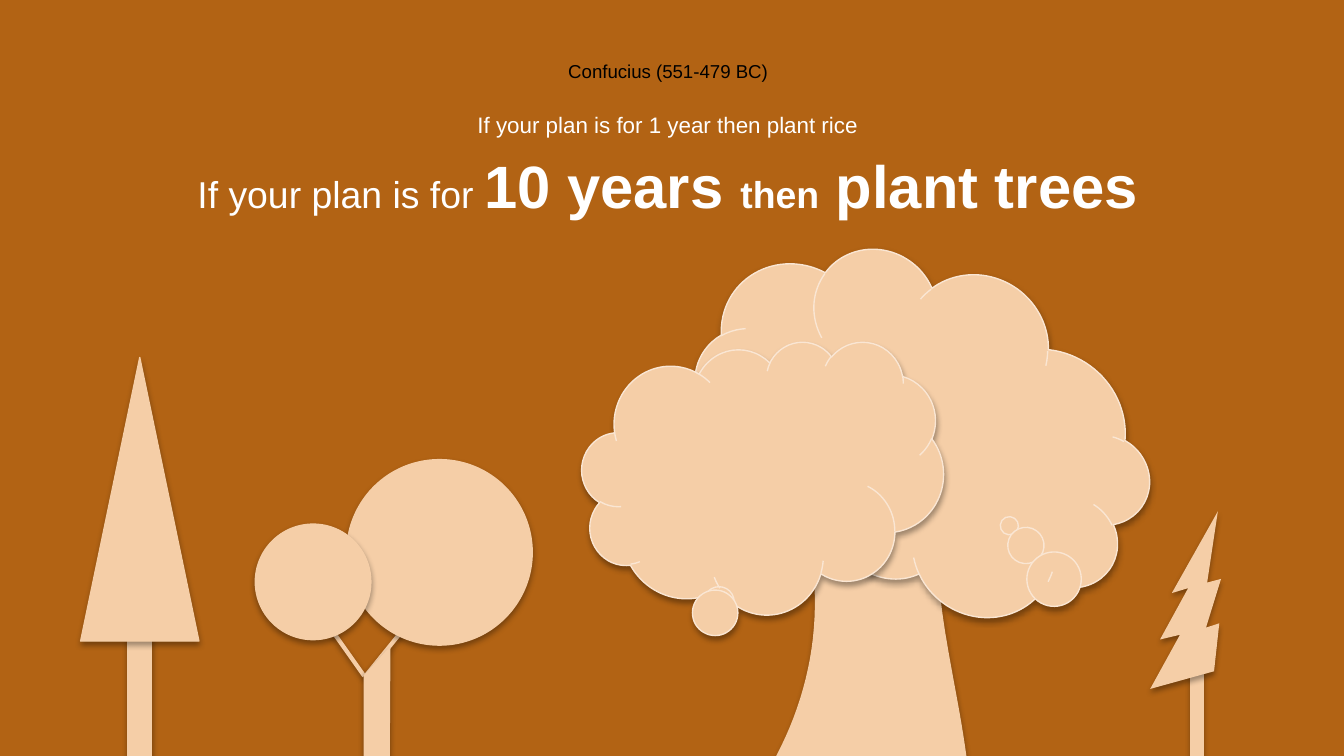
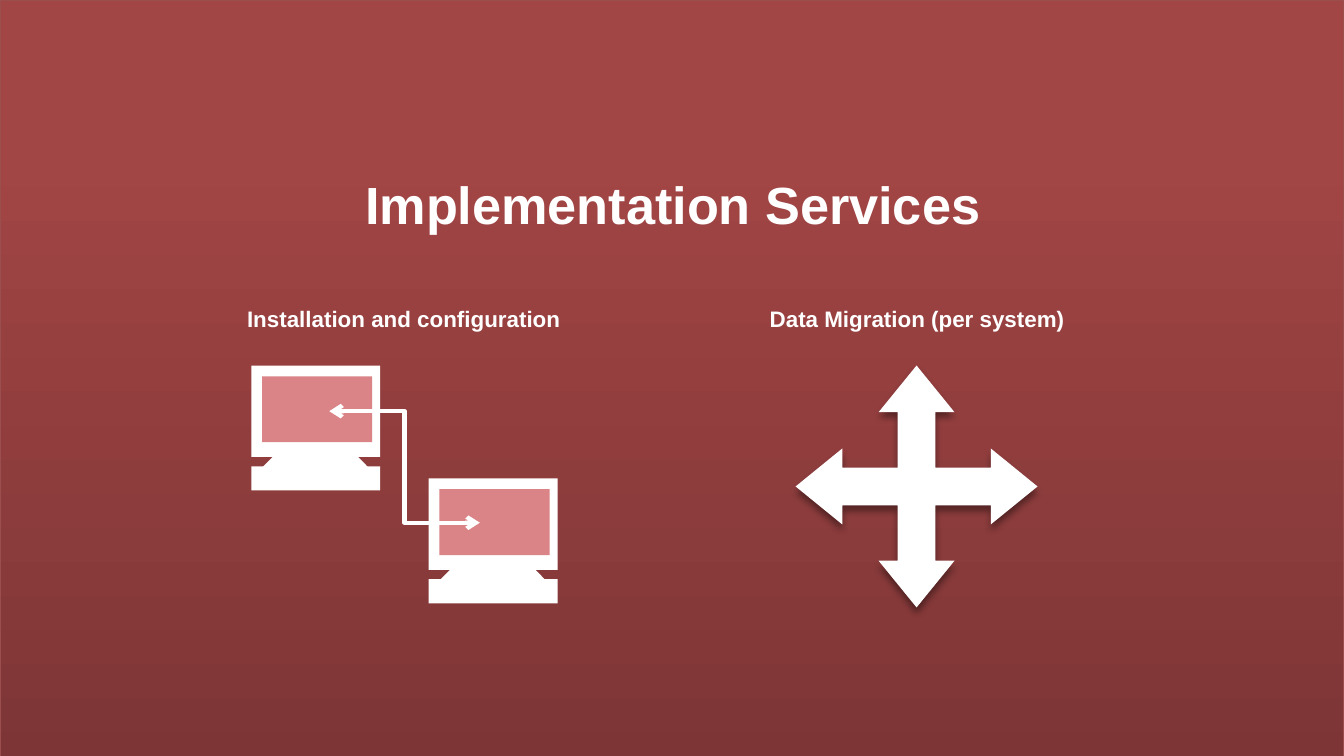
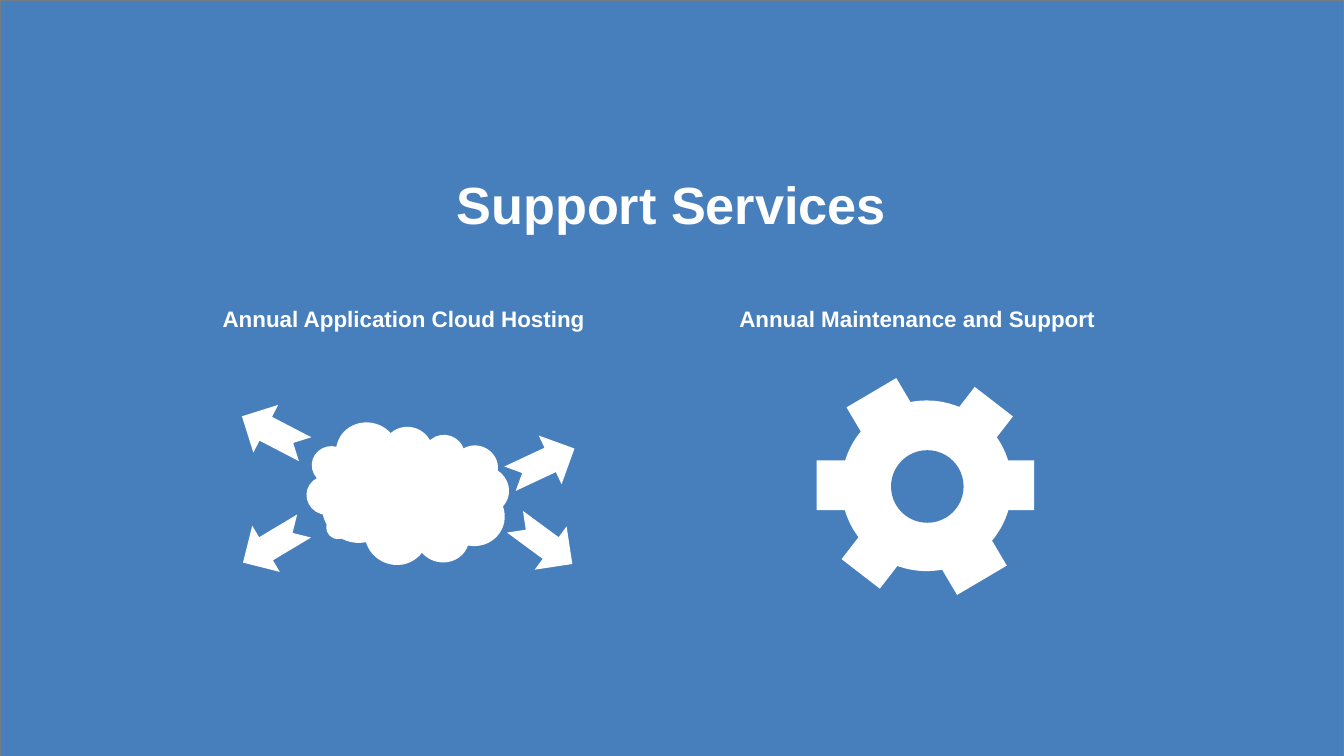
from typing import NamedTuple

from lxml import etree
from pptx import Presentation
from pptx.dml.color import RGBColor
from pptx.enum.shapes import MSO_CONNECTOR, MSO_SHAPE
from pptx.enum.text import MSO_AUTO_SIZE, PP_ALIGN
from pptx.oxml.ns import qn
from pptx.util import Inches, Pt

PX = 9144
FONT = "Arial"

RECTANGLE = MSO_SHAPE.RECTANGLE
TRIANGLE = MSO_SHAPE.ISOSCELES_TRIANGLE
OVAL = MSO_SHAPE.OVAL
DONUT = MSO_SHAPE.DONUT
CLOUD = MSO_SHAPE.CLOUD_CALLOUT
BOLT = MSO_SHAPE.LIGHTNING_BOLT
QUAD_ARROW = MSO_SHAPE.QUAD_ARROW
NOTCHED_ARROW = MSO_SHAPE.NOTCHED_RIGHT_ARROW
STRAIGHT = MSO_CONNECTOR.STRAIGHT
ELBOW = MSO_CONNECTOR.ELBOW
CENTER = PP_ALIGN.CENTER
GROW = MSO_AUTO_SIZE.SHAPE_TO_FIT_TEXT

BLACK = RGBColor(0x00, 0x00, 0x00)
WHITE = RGBColor(0xFF, 0xFF, 0xFF)
EARTH = RGBColor(0xB2, 0x63, 0x14)
EARTH_EDGE = RGBColor(0x83, 0x64, 0x45)
WOOD = RGBColor(0xF5, 0xCE, 0xA7)
LEAF_EDGE = RGBColor(0xFA, 0xE6, 0xD3)
RED_DARK = RGBColor(0x7D, 0x35, 0x35)
RED_MID = RGBColor(0xA2, 0x45, 0x45)
RED_LIGHT = RGBColor(0xA4, 0x43, 0x43)
RED_EDGE = RGBColor(0x9A, 0x4E, 0x4E)
SCREEN = RGBColor(0xDB, 0x84, 0x87)
BLUE = RGBColor(0x47, 0x7F, 0xBD)
BLUE_EDGE = RGBColor(0x72, 0x7D, 0x82)


class Shadow(NamedTuple):
    blur: float
    distance: float
    opacity: int


SOFT = Shadow(3.15, 1.81, 35)
BRANCH_SHADOW = Shadow(3.15, 1.57, 38)
DEEP = Shadow(4, 3, 40)


class Box(NamedTuple):
    left: int
    top: int
    width: int
    height: int

    def inside(self, left, top, width, height):
        return Box(self.left + left, self.top + top, width, height)

    def point(self, x, y):
        return round((self.left + x) * PX), round((self.top + y) * PX)

    def emu(self):
        return [value * PX for value in self]


BANNER = Box(-16, -22, 1026, 599)
PANEL = Box(0, 0, 1000, 570)


def add_shadow(properties, shadow):
    effects = properties.find(qn("a:effectLst"))
    if effects is None:
        effects = etree.SubElement(properties, qn("a:effectLst"))
    if shadow:
        outer = etree.SubElement(effects, qn("a:outerShdw"))
        outer.set("blurRad", str(Pt(shadow.blur)))
        outer.set("dist", str(Pt(shadow.distance)))
        outer.set("dir", "5400000")
        outer.set("rotWithShape", "0")
        color = etree.SubElement(outer, qn("a:srgbClr"), val=str(BLACK))
        etree.SubElement(color, qn("a:alpha"), val=str(shadow.opacity * 1000))


def paint(shape, fill, line=None, shadow=None):
    shape.fill.solid()
    shape.fill.fore_color.rgb = fill
    if line is None:
        shape.line.fill.background()
    else:
        shape.line.color.rgb = line
        shape.line.width = Pt(0.75)
    shape.shadow.inherit = False
    add_shadow(shape.element.spPr, shadow)


def add_preset(shapes, preset, box, fill, line=None, shadow=None, turn=0, adjust=()):
    shape = shapes.add_shape(preset, *box.emu())
    shape.rotation = turn
    for index, value in enumerate(adjust):
        shape.adjustments[index] = value
    paint(shape, fill, line, shadow)
    return shape


def add_outline(shapes, box, corners, fill, line=None, shadow=None):
    points = [box.point(*corner) for corner in corners]
    builder = shapes.build_freeform(*points[0])
    builder.add_line_segments(points[1:], close=True)
    paint(builder.convert_to_shape(), fill, line, shadow)


def add_line(shapes, kind, box, start, end, color, shadow=None, arrows=False):
    line = shapes.add_connector(kind, *box.point(*start), *box.point(*end))
    line.line.color.rgb = color
    line.line.width = Pt(2.25)
    if arrows:
        stroke = line.element.spPr.find(qn("a:ln"))
        for tag in ("a:headEnd", "a:tailEnd"):
            etree.SubElement(stroke, qn(tag), type="arrow")
    add_shadow(line.element.spPr, shadow)


def add_text(page, box, spans, color=WHITE, wrap=True):
    frame = page.shapes.add_textbox(*box.emu()).text_frame
    frame.word_wrap = wrap
    frame.auto_size = GROW
    para = frame.paragraphs[0]
    para.alignment = CENTER
    for words, size, bold in spans:
        span = para.add_run()
        span.text = words
        span.font.name = FONT
        span.font.size = Pt(size)
        span.font.bold = bold
        span.font.color.rgb = color


def add_group(page):
    return page.shapes.add_group_shape().shapes


def add_page(deck):
    return deck.slides.add_slide(deck.slide_layouts[6])


def curve(start, first, second, end, steps=24):
    points = []
    for step in range(steps + 1):
        t = step / steps
        weights = ((1 - t) ** 3, 3 * t * (1 - t) ** 2, 3 * t * t * (1 - t), t ** 3)
        points.append(tuple(
            sum(weight * value for weight, value in zip(weights, axis))
            for axis in zip(start, first, second, end)
        ))
    return points


def draw_quote(page, box):
    add_text(page, box.inside(0, 0, box.width, 27),
             [("Confucius (551-479 BC)", 10, False)], BLACK)
    add_text(page, box.inside(0, 66, box.width, 64), [
        ("If your plan is for ", 20, False),
        ("10 years ", 32, True),
        ("then", 20, True),
        (" plant trees", 32, True),
    ])
    add_text(page, box.inside(0, 38, box.width, 30),
             [("If your plan is for 1 year then plant rice", 12, False)])


def draw_fir(page, box):
    shapes = add_group(page)
    add_preset(shapes, RECTANGLE, box.inside(35, 203, 18, 131), WOOD, WOOD, SOFT)
    add_preset(shapes, TRIANGLE, box.inside(0, 0, 88, 211), WOOD, WOOD, SOFT)


def draw_round_tree(page, box):
    shapes = add_group(page)
    for start, end in (((57, 127), (81, 161)), ((116, 119), (82, 161))):
        add_line(shapes, STRAIGHT, box, start, end, WOOD, BRANCH_SHADOW)
    for left, top, size in ((68, 0, 138), (0, 48, 86)):
        add_preset(shapes, OVAL, box.inside(left, top, size, size), WOOD, WOOD, SOFT)
    trunk = [(81, 161), (100, 140), (99, 312), (81, 312)]
    add_outline(shapes, box, trunk, WOOD, WOOD, SOFT)


def draw_oak(page, box):
    shapes = add_group(page)
    right_side = curve((265, 228), (265, 274), (288, 353), (288, 399))
    left_side = curve((130, 393), (164, 342), (181, 282), (171, 216))
    add_outline(shapes, box, right_side + left_side, WOOD, WOOD, SOFT)
    add_preset(shapes, CLOUD, box.inside(82, 0, 347, 243), WOOD, LEAF_EDGE, SOFT,
               215.9, (-0.272, -0.098))
    add_preset(shapes, CLOUD, box.inside(0, 59, 269, 203), WOOD, LEAF_EDGE, SOFT,
               0, (-0.124, 0.467))


def draw_bolt_tree(page, box):
    shapes = add_group(page)
    add_preset(shapes, RECTANGLE, box.inside(59, 63, 9, 131), WOOD, WOOD, SOFT)
    crown = add_preset(shapes, BOLT, box.inside(0, 0, 118, 95), WOOD, None, SOFT, 144.3)
    crown.element.spPr.find(qn("a:xfrm")).set("flipH", "1")


def build_trees(deck):
    page = add_page(deck)
    add_preset(page.shapes, RECTANGLE, BANNER, EARTH, EARTH_EDGE, SOFT)
    draw_quote(page, Box(BANNER.left, 40, BANNER.width, 130))
    draw_fir(page, Box(60, 266, 88, 334))
    draw_round_tree(page, Box(190, 342, 206, 312))
    draw_oak(page, Box(433, 195, 429, 400))
    draw_bolt_tree(page, Box(827, 406, 118, 194))


def add_service_page(deck, fill, edge, title, title_box, left_label, right_label):
    page = add_page(deck)
    panel = add_preset(page.shapes, RECTANGLE, PANEL, fill, edge, SOFT)
    add_text(page, title_box, [(title, 28, True)], wrap=False)
    add_text(page, Box(149, 222, 303, 30), [(left_label, 12, True)])
    add_text(page, Box(511, 222, 343, 30), [(right_label, 12, True)])
    return page, panel


def blend(shape, stops):
    shape.fill.gradient()
    shape.fill.gradient_angle = 90
    stop_list = shape.element.spPr.find(".//" + qn("a:gsLst"))
    stop_list.clear()
    for place, color in stops:
        stop = etree.SubElement(stop_list, qn("a:gs"), pos=str(place * 1000))
        etree.SubElement(stop, qn("a:srgbClr"), val=str(color))


def draw_computer(shapes, box):
    add_preset(shapes, RECTANGLE, box.inside(0, 0, 96, 68), WHITE)
    stand = [(38, 46), (58, 46), (94, 83), (2, 82)]
    add_outline(shapes, box, stand, WHITE)
    add_preset(shapes, RECTANGLE, box.inside(8, 8, 82, 49), SCREEN)
    add_preset(shapes, RECTANGLE, box.inside(0, 75, 96, 18), WHITE)


def draw_linked_computers(page, box):
    shapes = add_group(page)
    for left, top in ((0, 0), (132, 84)):
        draw_computer(shapes, box.inside(left, top, 96, 93))
    add_line(shapes, ELBOW, box, (58, 34), (170, 117), WHITE, arrows=True)


def build_implementation(deck):
    page, panel = add_service_page(
        deck, RED_MID, RED_EDGE, "Implementation Services", Box(259, 123, 483, 57),
        "Installation and configuration", "Data Migration (per system)")
    blend(panel, ((0, RED_DARK), (80, RED_MID), (100, RED_LIGHT)))
    add_preset(page.shapes, QUAD_ARROW, Box(592, 272, 180, 180), WHITE,
               shadow=DEEP, adjust=(0.156, 0.157, 0.193))
    draw_linked_computers(page, Box(187, 272, 228, 177))


def draw_cloud_hosting(page, box):
    shapes = add_group(page)
    add_preset(shapes, CLOUD, box.inside(51, 14, 150, 105), WHITE,
               turn=18.7, adjust=(-0.201, 0.274))
    arrows = ((0, 83, 149.1), (201, 82, 36.4), (0, 0, 207.5), (200, 23, 334.9))
    for left, top, turn in arrows:
        add_preset(shapes, NOTCHED_ARROW, box.inside(left, top, 53, 40), WHITE, turn=turn)


def draw_gear(page, box):
    shapes = add_group(page)
    add_preset(shapes, DONUT, box.inside(0, 18, 127, 127), WHITE)
    teeth = ((42, 1, 43, 329.5), (44, 0, 37, 270), (46, 2, 36, 37.7))
    for left, top, width, turn in teeth:
        add_preset(shapes, RECTANGLE, box.inside(left, top, width, 162), WHITE, turn=turn)
    add_preset(shapes, OVAL, box.inside(37, 55, 54, 54), BLUE)


def build_support(deck):
    page, _ = add_service_page(
        deck, BLUE, BLUE_EDGE, "Support Services", Box(328, 123, 343, 57),
        "Annual Application Cloud Hosting", "Annual Maintenance and Support")
    draw_cloud_hosting(page, Box(177, 302, 254, 123))
    draw_gear(page, Box(626, 280, 127, 164))


def main():
    deck = Presentation()
    deck.slide_width = Inches(10)
    deck.slide_height = Inches(5.625)
    build_trees(deck)
    build_implementation(deck)
    build_support(deck)
    deck.save("out.pptx")


if __name__ == "__main__":
    main()
